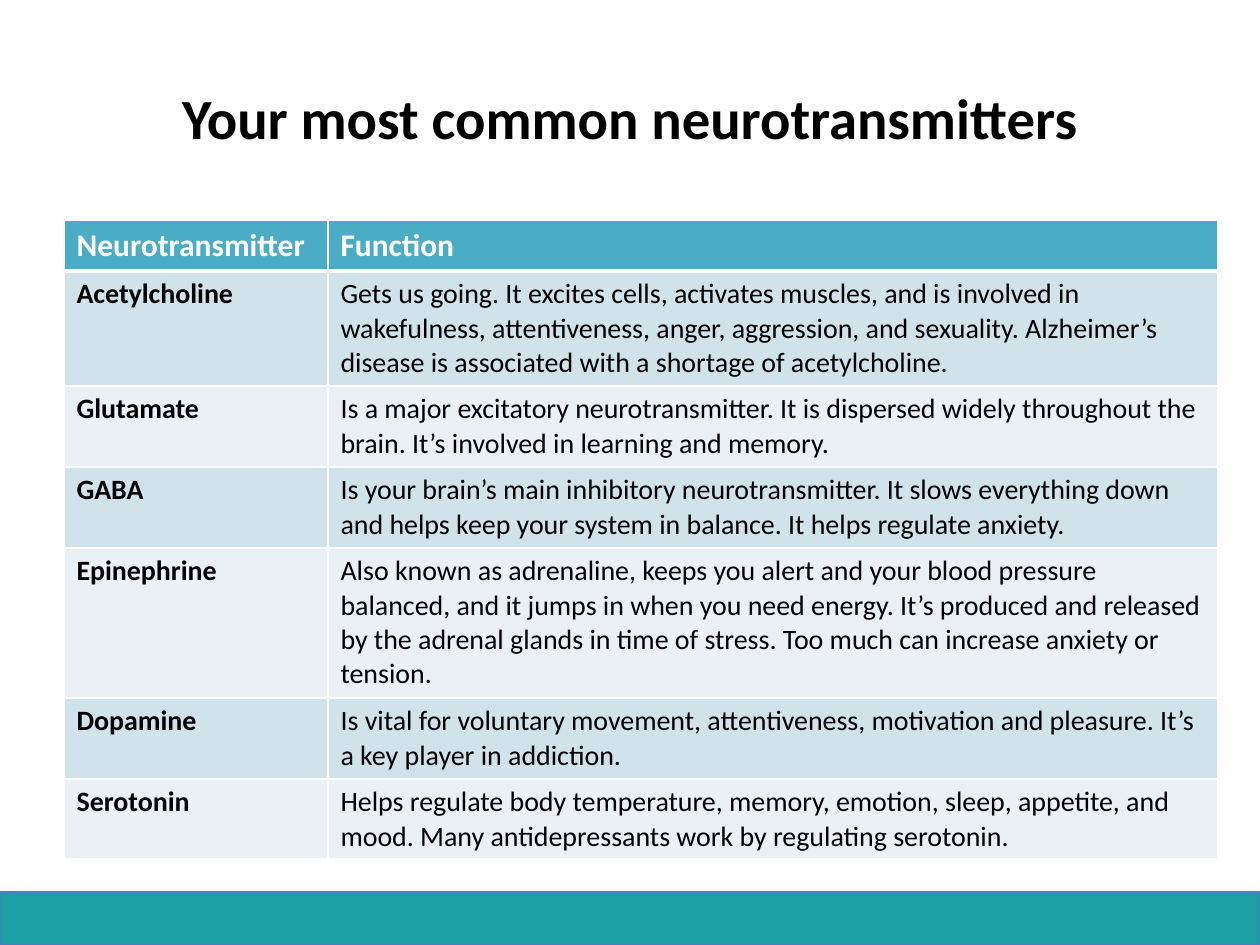
"""Build a slide with a table of common neurotransmitters."""
import pptx
import pptx.dml.color
import pptx.enum.shapes
import pptx.enum.text
import pptx.oxml
import pptx.oxml.ns
import pptx.util

EMU_PER_PX = 914400 / 126
FONT = "Calibri"
COLORS = {
    "bar": "1C9FA3",
    "bar_line": "4B7EBC",
    "header": "4BACC6",
    "band_dark": "D0E3EA",
    "band_light": "E9F1F5",
    "text": "000000",
    "white": "FFFFFF",
}
COLUMN_WIDTHS = [264, 890]
ROW_HEIGHTS = [51, 115, 81, 81, 150, 81, 80]
ROWS = [
    ("Neurotransmitter", "Function"),
    ("Acetylcholine",
     "Gets us going. It excites cells, activates muscles, and is involved in "
     "wakefulness, attentiveness, anger, aggression, and sexuality. Alzheimer’s "
     "disease is associated with a shortage of acetylcholine."),
    ("Glutamate",
     "Is a major excitatory neurotransmitter. It is dispersed widely throughout "
     "the brain. It’s involved in learning and memory."),
    ("GABA",
     "Is your brain’s main inhibitory neurotransmitter. It slows everything down "
     "and helps keep your system in balance. It helps regulate anxiety."),
    ("Epinephrine",
     "Also known as adrenaline, keeps you alert and your blood pressure balanced, "
     "and it jumps in when you need energy. It’s produced and released by the "
     "adrenal glands in time of stress. Too much can increase anxiety or tension."),
    ("Dopamine",
     "Is vital for voluntary movement, attentiveness, motivation and pleasure. "
     "It’s a key player in addiction."),
    ("Serotonin",
     "Helps regulate body temperature, memory, emotion, sleep, appetite, and mood. "
     "Many antidepressants work by regulating serotonin."),
]


def px(n):
    """Turn pixels into EMU."""
    return pptx.util.Emu(round(n * EMU_PER_PX))


def rgb(name):
    """Return a named colour."""
    return pptx.dml.color.RGBColor.from_string(COLORS[name])


def write(tf, text, size, color, bold):
    """Put one styled paragraph in a text frame and return it."""
    p = tf.paragraphs[0]
    p.text = text
    p.font.name = FONT
    p.font.size = pptx.util.Pt(size)
    p.font.bold = bold
    p.font.color.rgb = rgb(color)
    return p


def add_bar(slide, x, y, w, h):
    """Add the footer bar."""
    sp = slide.shapes.add_shape(
        pptx.enum.shapes.MSO_SHAPE.RECTANGLE, px(x), px(y), px(w), px(h))
    sp.shadow.inherit = False
    sp.fill.solid()
    sp.fill.fore_color.rgb = rgb("bar")
    sp.line.color.rgb = rgb("bar_line")
    sp.line.width = pptx.util.Pt(0.75)


def add_title(slide, text, x, y, w, h):
    """Add the centred title."""
    tf = slide.shapes.add_textbox(px(x), px(y), px(w), px(h)).text_frame
    tf.word_wrap = True
    tf.vertical_anchor = pptx.enum.text.MSO_ANCHOR.MIDDLE
    p = write(tf, text, 32.4, "text", True)
    p.alignment = pptx.enum.text.PP_ALIGN.CENTER


def set_border(cell, side, points):
    """Draw a white border on one side of a cell."""
    cell._tc.get_or_add_tcPr().append(pptx.oxml.parse_xml(
        f'<a:ln{side} {pptx.oxml.ns.nsdecls("a")} w="{pptx.util.Pt(points)}">'
        f'<a:solidFill><a:srgbClr val="{COLORS["white"]}"/></a:solidFill>'
        f'</a:ln{side}>'))


def fill_cell(cell, text, row, column):
    """Style one cell by its place in the table."""
    is_header = row == 0
    for side in "LRTB":
        thick = (side == "B" and is_header) or (side == "T" and row == 1)
        set_border(cell, side, 3 if thick else 1)
    band = "band_dark" if row % 2 else "band_light"
    cell.fill.solid()
    cell.fill.fore_color.rgb = rgb("header" if is_header else band)
    write(cell.text_frame, text, 18 if is_header else 16,
          "white" if is_header else "text", is_header or column == 0)


def add_table(slide, x, y):
    """Add the table of neurotransmitters and functions."""
    table = slide.shapes.add_table(
        len(ROWS), len(COLUMN_WIDTHS), px(x), px(y),
        px(sum(COLUMN_WIDTHS)), px(sum(ROW_HEIGHTS))).table
    for column, width in zip(table.columns, COLUMN_WIDTHS):
        column.width = px(width)
    for row, height in zip(table.rows, ROW_HEIGHTS):
        row.height = px(height)
    for r, texts in enumerate(ROWS):
        for c, text in enumerate(texts):
            fill_cell(table.cell(r, c), text, r, c)


def main():
    """Build and save the slide."""
    prs = pptx.Presentation()
    prs.slide_width, prs.slide_height = px(1260), px(945)
    slide = prs.slides.add_slide(prs.slide_layouts[6])
    add_bar(slide, 0, 892, 1260, 53)
    add_title(slide, "Your most common neurotransmitters", 63, 38, 1134, 158)
    add_table(slide, 64, 220)
    prs.save("out.pptx")


if __name__ == "__main__":
    main()
